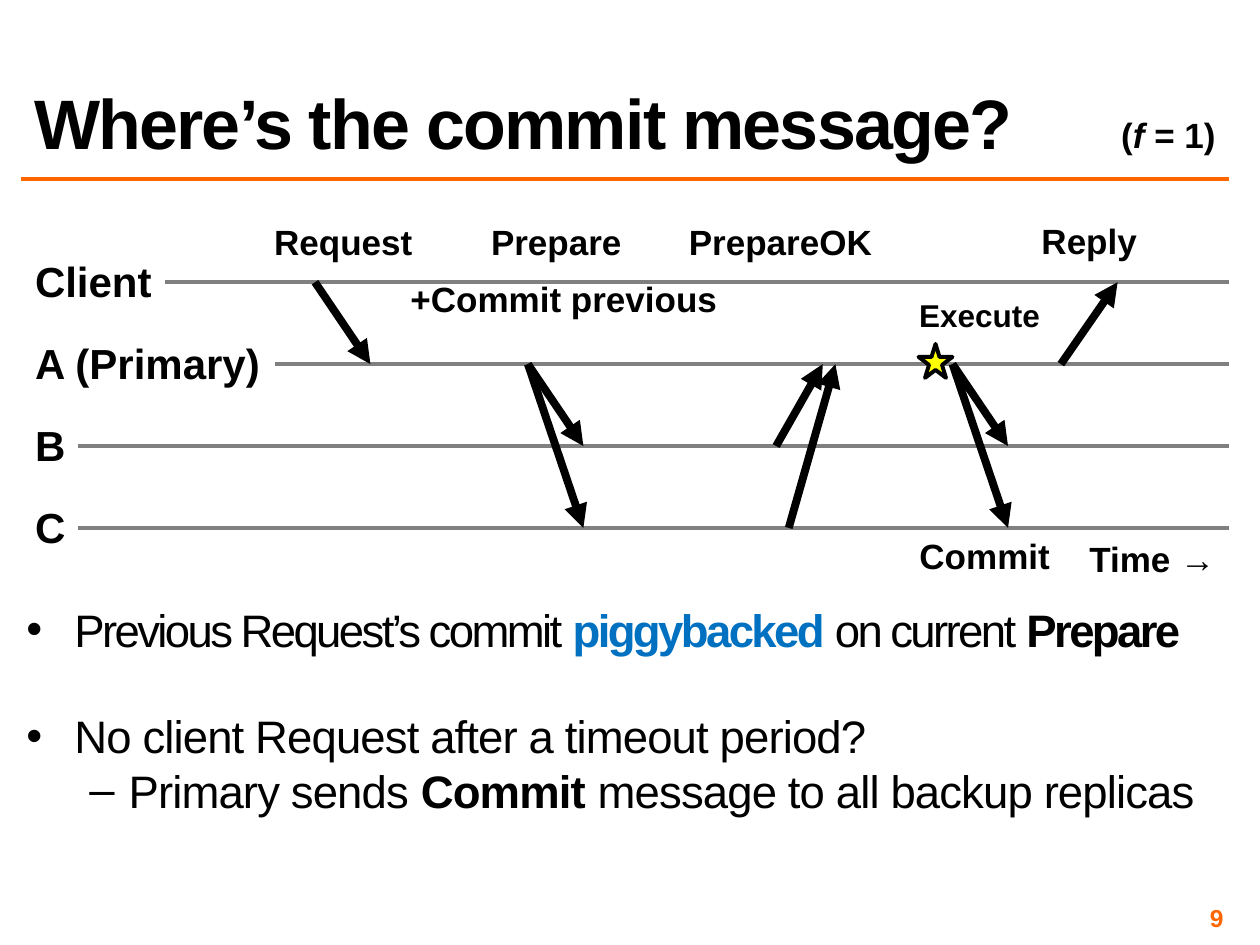
"""Build a slide on how commit messages piggyback on the next Prepare."""
from dataclasses import dataclass

import lxml.etree
import pptx
import pptx.dml.color
import pptx.enum.shapes
import pptx.enum.text
import pptx.oxml.ns
import pptx.util

Inches, Pt = pptx.util.Inches, pptx.util.Pt
Align, Anchor = pptx.enum.text.PP_ALIGN, pptx.enum.text.MSO_ANCHOR


@dataclass(frozen=True)
class Theme:
    font: str = "Arial"
    ink: str = "000000"
    accent: str = "FF6600"
    emphasis: str = "0070C0"
    lane: str = "808080"
    star: str = "FFFF00"
    title: int = 40
    body: int = 26
    lane_label: int = 24
    label: int = 20
    small: int = 18
    number: int = 14


THEME = Theme()
LEFT, RIGHT = 0.17, 9.75
WIDTH = RIGHT - LEFT
LANE_TOP, LANE_GAP = 2.24, 0.65
STEP = 0.44
LABEL_HEIGHT = 0.44

TITLE = "Where’s the commit message?"
LANES = [("Client", 1.31), ("A (Primary)", 2.18), ("B", 0.62), ("C", 0.62)]
MESSAGES = [
    (2.5, 0, 2.5 + STEP, 1),
    (4.19, 1, 4.19 + STEP, 2),
    (4.19, 1, 4.19 + STEP, 3),
    (6.26, 3, 6.63, 1),
    (6.16, 2, 6.53, 1),
    (8.42, 1, 8.87, 0),
    (7.56, 1, 7.56 + STEP, 2),
    (7.56, 1, 7.56 + STEP, 3),
]
LABELS = [
    ("Request", 2.07, 1.7, 1.31, THEME.label),
    ("Prepare", 3.79, 1.7, 1.25, THEME.label),
    ("PrepareOK", 5.36, 1.7, 1.67, THEME.label),
    ("Reply", 8.16, 1.69, 0.97, THEME.label),
    ("+Commit previous", 3.15, 2.15, 2.65, THEME.label),
    ("Execute", 7.19, 2.3, 1.17, THEME.small),
    ("Commit", 7.19, 4.19, 1.25, THEME.label),
    ("Time →", 8.54, 4.22, 1.21, THEME.label),
]
FAULTS = [(" (", {}), ("f", {"italic": True}), (" = 1)", {})]
BOLD = {"bold": True}
BULLETS = [
    {"level": 0, "before": 6, "spacing": -1.5, "runs": [
        ("Previous Request’s commit ", {}),
        ("piggybacked ", {"bold": True, "color": THEME.emphasis}),
        ("on current ", {}), ("Prepare", BOLD)]},
    {"level": 0, "before": 36, "spacing": -0.5, "runs": [
        ("No client Request after a timeout period?", {})]},
    {"level": 1, "before": 6, "spacing": -0.5, "runs": [
        ("Primary sends ", {}), ("Commit", BOLD),
        (" message to all backup replicas", {})]},
]
LEVELS = [("•", 0.38, -0.38), ("–", 0.81, -0.31)]


def rgb(color):
    return pptx.dml.color.RGBColor.from_string(color)


def lane_y(row):
    return LANE_TOP + row * LANE_GAP


def add_run(paragraph, text, size, bold=False, italic=False, color=THEME.ink, spacing=0):
    run = paragraph.add_run()
    run.text = text
    font = run.font
    font.name, font.size, font.bold, font.italic = THEME.font, Pt(size), bold, italic
    font.color.rgb = rgb(color)
    if spacing:
        font._element.set("spc", str(int(spacing * 100)))


def place(shape, left, top, width, height):
    shape.left, shape.top = Inches(left), Inches(top)
    shape.width, shape.height = Inches(width), Inches(height)


def set_insets(frame, inset):
    frame.margin_left = frame.margin_right = Inches(inset)
    frame.margin_top = frame.margin_bottom = Inches(inset)


def add_text(slide, runs, box, size, align=Align.CENTER, **style):
    frame = slide.shapes.add_textbox(*map(Inches, box)).text_frame
    frame.word_wrap = False
    paragraph = frame.paragraphs[0]
    paragraph.alignment = align
    for text, changes in runs:
        add_run(paragraph, text, size, bold=True, **style, **changes)
    return frame


def add_line(slide, start, end, color, width, arrow=False):
    line = slide.shapes.add_connector(
        pptx.enum.shapes.MSO_CONNECTOR.STRAIGHT, *map(Inches, start + end))
    line.line.color.rgb, line.line.width = rgb(color), Pt(width)
    if arrow:
        tail = lxml.etree.SubElement(line.line._get_or_add_ln(), pptx.oxml.ns.qn("a:tailEnd"))
        tail.set("type", "triangle")
    lxml.etree.SubElement(line._element.spPr, pptx.oxml.ns.qn("a:effectLst"))


def add_heading(slide):
    title = slide.shapes.title
    place(title, LEFT, 0.17, WIDTH, 1.17)
    frame = title.text_frame
    frame.auto_size = pptx.enum.text.MSO_AUTO_SIZE.NONE
    frame.vertical_anchor = Anchor.BOTTOM
    paragraph = frame.paragraphs[0]
    paragraph.alignment, paragraph.line_spacing = Align.LEFT, 0.8
    add_run(paragraph, TITLE, THEME.title, bold=True, spacing=-1)
    add_line(slide, (LEFT, 1.42), (RIGHT, 1.42), THEME.accent, 2)
    add_text(slide, FAULTS, (8.72, 0.85, 1.03, LABEL_HEIGHT), THEME.label)


def add_bullets(slide):
    body = slide.placeholders[1]
    place(body, LEFT, 4.82, WIDTH, 2.26)
    frame = body.text_frame
    frame.auto_size = pptx.enum.text.MSO_AUTO_SIZE.NONE
    set_insets(frame, 0.04)
    for index, bullet in enumerate(BULLETS):
        paragraph = frame.add_paragraph() if index else frame.paragraphs[0]
        paragraph.level = bullet["level"]
        paragraph.line_spacing, paragraph.space_before = 0.8, Pt(bullet["before"])
        mark, margin, indent = LEVELS[bullet["level"]]
        properties = paragraph._p.get_or_add_pPr()
        properties.set("marL", str(Inches(margin)))
        properties.set("indent", str(Inches(indent)))
        lxml.etree.SubElement(properties, pptx.oxml.ns.qn("a:buChar")).set("char", mark)
        for text, changes in bullet["runs"]:
            add_run(paragraph, text, THEME.body, spacing=bullet["spacing"], **changes)


def add_diagram(slide):
    for row, (name, start) in enumerate(LANES):
        y = lane_y(row)
        add_text(slide, [(name, {})], (0.18, y - 0.26, start - 0.18, 0.5),
                 THEME.lane_label, Align.LEFT)
        add_line(slide, (start, y), (RIGHT, y), THEME.lane, 2.25)
    for x1, row1, x2, row2 in MESSAGES:
        add_line(slide, (x1, lane_y(row1)), (x2, lane_y(row2)), THEME.ink, 4.5, arrow=True)
    for text, left, top, width, size in LABELS:
        add_text(slide, [(text, {})], (left, top, width, LABEL_HEIGHT), size)
    star = slide.shapes.add_shape(
        pptx.enum.shapes.MSO_SHAPE.STAR_5_POINT, *map(Inches, (7.29, 2.73, 0.27, 0.27)))
    star.shadow.inherit = False
    star.fill.solid()
    star.fill.fore_color.rgb = rgb(THEME.star)
    star.line.color.rgb, star.line.width = rgb(THEME.ink), Pt(2.25)


def main():
    presentation = pptx.Presentation()
    presentation.slide_width, presentation.slide_height = Inches(10), Inches(7.5)
    slide = presentation.slides.add_slide(presentation.slide_layouts[1])
    add_heading(slide)
    add_bullets(slide)
    add_diagram(slide)
    number = add_text(slide, [("9", {})], (7.42, 7.17, 2.33, 0.23), THEME.number,
                      Align.RIGHT, color=THEME.accent)
    number.vertical_anchor = Anchor.MIDDLE
    set_insets(number, 0.04)
    number.word_wrap = True
    presentation.save("out.pptx")


if __name__ == "__main__":
    main()
